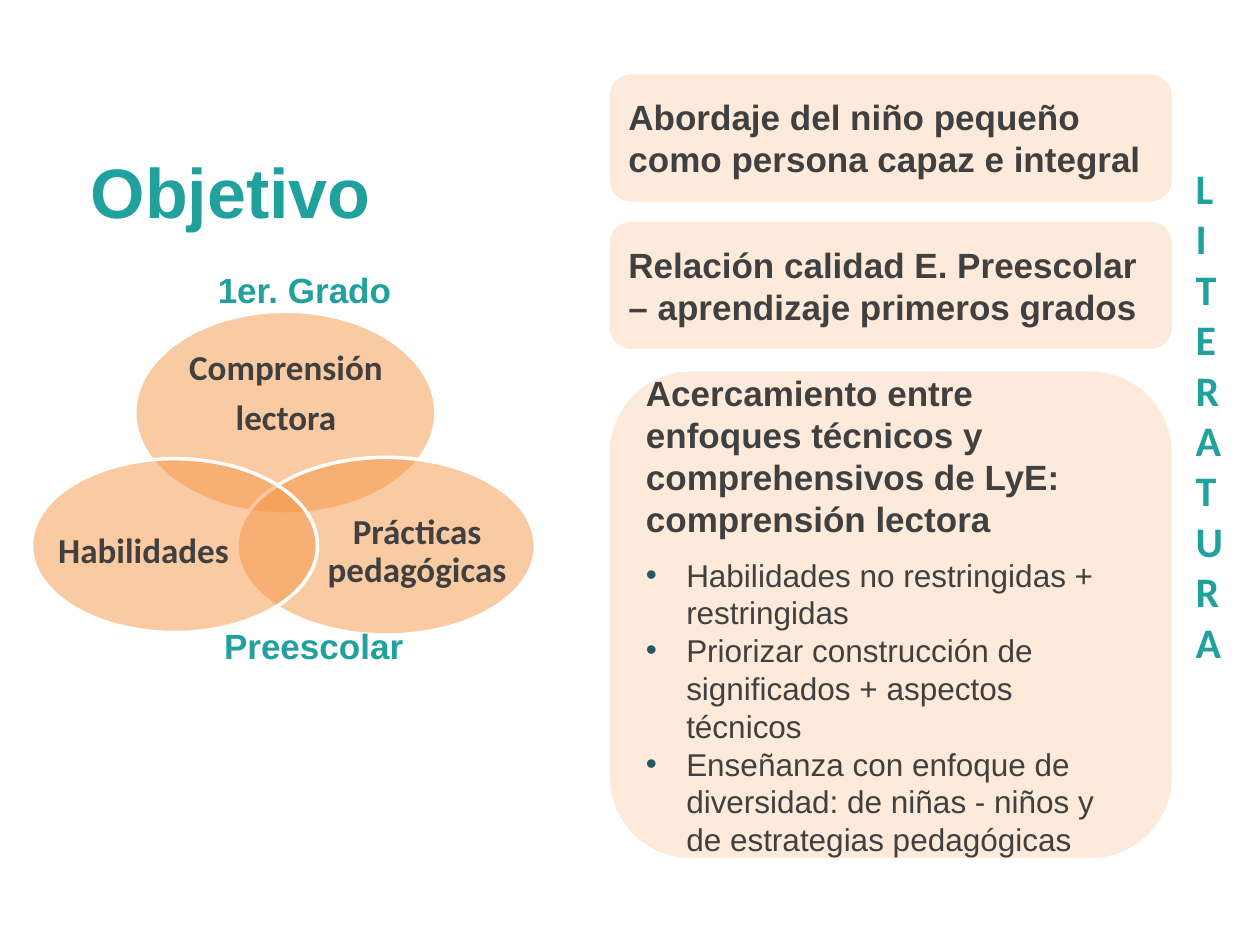
from lxml.etree import SubElement
from pptx import Presentation
from pptx.dml.color import RGBColor
from pptx.enum.shapes import MSO_SHAPE
from pptx.enum.text import MSO_ANCHOR, PP_ALIGN
from pptx.oxml.ns import qn
from pptx.util import Inches, Pt

TEAL = RGBColor(0x20, 0xA1, 0x9E)
GREY = RGBColor(0x40, 0x40, 0x40)
ORANGE = RGBColor(0xF7, 0x96, 0x46)
PEACH = RGBColor(0xFD, 0xEA, 0xDA)
WHITE = RGBColor(0xFF, 0xFF, 0xFF)
BULLET_COLOR = "215968"

TITLE = "Objetivo"
# Paragraphs, ellipse box and label box of each circle, back to front
VENN = [
    (["Comprensión", "lectora"], (1.07, 2.47, 2.39, 1.61), (1.39, 2.76, 1.76, 0.73)),
    (["Prácticas pedagógicas"], (1.88, 3.63, 2.37, 1.41), (2.6, 4, 1.42, 0.77)),
    (["Habilidades"], (0.25, 3.64, 2.27, 1.38), (0.46, 4, 1.36, 0.76)),
]
LEVELS = [
    ("1er. Grado", (1.63, 2.08, 1.59, 0.44)),
    ("Preescolar", (1.68, 4.91, 1.64, 0.44)),
]
# Heading, bullets, top and height of each card
CARDS = [
    ("Abordaje del niño pequeño como persona capaz e integral", [], 0.59, 1.01),
    ("Relación calidad E. Preescolar – aprendizaje primeros grados", [], 1.76, 1.01),
    ("Acercamiento entre enfoques técnicos y comprehensivos de LyE: comprensión lectora",
     ["Habilidades no restringidas + restringidas",
      "Priorizar construcción de significados + aspectos técnicos",
      "Enseñanza con enfoque de diversidad: de niñas - niños y de estrategias pedagógicas"],
     2.95, 3.86),
]
CARD_LEFT, CARD_WIDTH = 4.84, 4.46
SIDE_WORD = "LITERATURA"
SIDE_BOX = (9.39, 1.24, 0.42, 4.14)


def inches(box):
    return [Inches(length) for length in box]


def format_runs(paragraph, size, color, name="Arial", bold=True):
    for run in paragraph.runs:
        font = run.font
        font.size, font.name, font.bold = Pt(size), name, bold
        font.color.rgb = color


def add_label(slide, lines, box, size, color, name="Arial", wrap=False):
    frame = slide.shapes.add_textbox(*inches(box)).text_frame
    frame.word_wrap = wrap
    frame.text = "\n".join(lines)
    for paragraph in frame.paragraphs:
        format_runs(paragraph, size, color, name)
    return frame


def add_filled(slide, preset, box, color):
    shape = slide.shapes.add_shape(preset, *inches(box))
    shape.shadow.inherit = False
    shape.fill.solid()
    shape.fill.fore_color.rgb = color
    shape.line.fill.background()
    return shape


def add_circle(slide, lines, ellipse_box, label_box):
    ellipse = add_filled(slide, MSO_SHAPE.OVAL, ellipse_box, ORANGE)
    ellipse.line.color.rgb = WHITE
    ellipse.line.width = Pt(2)
    fill_color = ellipse.fill._xPr.find(qn("a:solidFill"))[0]
    SubElement(fill_color, qn("a:alpha"), val="50000")

    frame = add_label(slide, lines, label_box, 20, GREY, "Calibri", wrap=True)
    frame.vertical_anchor = MSO_ANCHOR.MIDDLE
    frame.margin_left = frame.margin_right = frame.margin_top = frame.margin_bottom = 0
    for paragraph in frame.paragraphs:
        paragraph.alignment = PP_ALIGN.CENTER
        paragraph.line_spacing = 0.9
        paragraph.space_after = Pt(7)


def add_bullet(paragraph):
    properties = paragraph._p.get_or_add_pPr()
    properties.set("marL", str(Inches(0.32)))
    properties.set("indent", str(-Inches(0.32)))
    color = SubElement(properties, qn("a:buClr"))
    SubElement(color, qn("a:srgbClr"), val=BULLET_COLOR)
    SubElement(properties, qn("a:buFont"), typeface="Arial")
    SubElement(properties, qn("a:buChar"), char="•")


def add_card(slide, heading, bullets, top, height):
    card = add_filled(slide, MSO_SHAPE.ROUNDED_RECTANGLE,
                      (CARD_LEFT, top, CARD_WIDTH, height), PEACH)
    frame = card.text_frame
    frame.word_wrap = True
    frame.vertical_anchor = MSO_ANCHOR.MIDDLE
    frame.text = "\n".join([heading] + bullets)
    first, *items = frame.paragraphs
    format_runs(first, 20, GREY)
    if items:
        first.space_after = Pt(9)
    for item in items:
        add_bullet(item)
        format_runs(item, 18, GREY, bold=False)
    for paragraph in frame.paragraphs:
        paragraph.alignment = PP_ALIGN.LEFT


def add_title(slide):
    title = slide.shapes.title
    title.left, title.top, title.width, title.height = inches((0.62, 1.13, 2.45, 0.77))
    frame = title.text_frame
    frame.text = TITLE
    frame.word_wrap = False
    frame.vertical_anchor = MSO_ANCHOR.TOP
    frame.paragraphs[0].alignment = PP_ALIGN.LEFT
    format_runs(frame.paragraphs[0], 40, TEAL)


def main():
    presentation = Presentation()
    presentation.slide_width, presentation.slide_height = Inches(10), Inches(7.5)
    slide = presentation.slides.add_slide(presentation.slide_layouts[5])
    add_title(slide)
    for circle in VENN:
        add_circle(slide, *circle)
    for level, box in LEVELS:
        add_label(slide, [level], box, 20, TEAL)
    for card in CARDS:
        add_card(slide, *card)
    add_label(slide, SIDE_WORD, SIDE_BOX, 24, TEAL, "Calibri")
    presentation.save("out.pptx")


if __name__ == "__main__":
    main()
